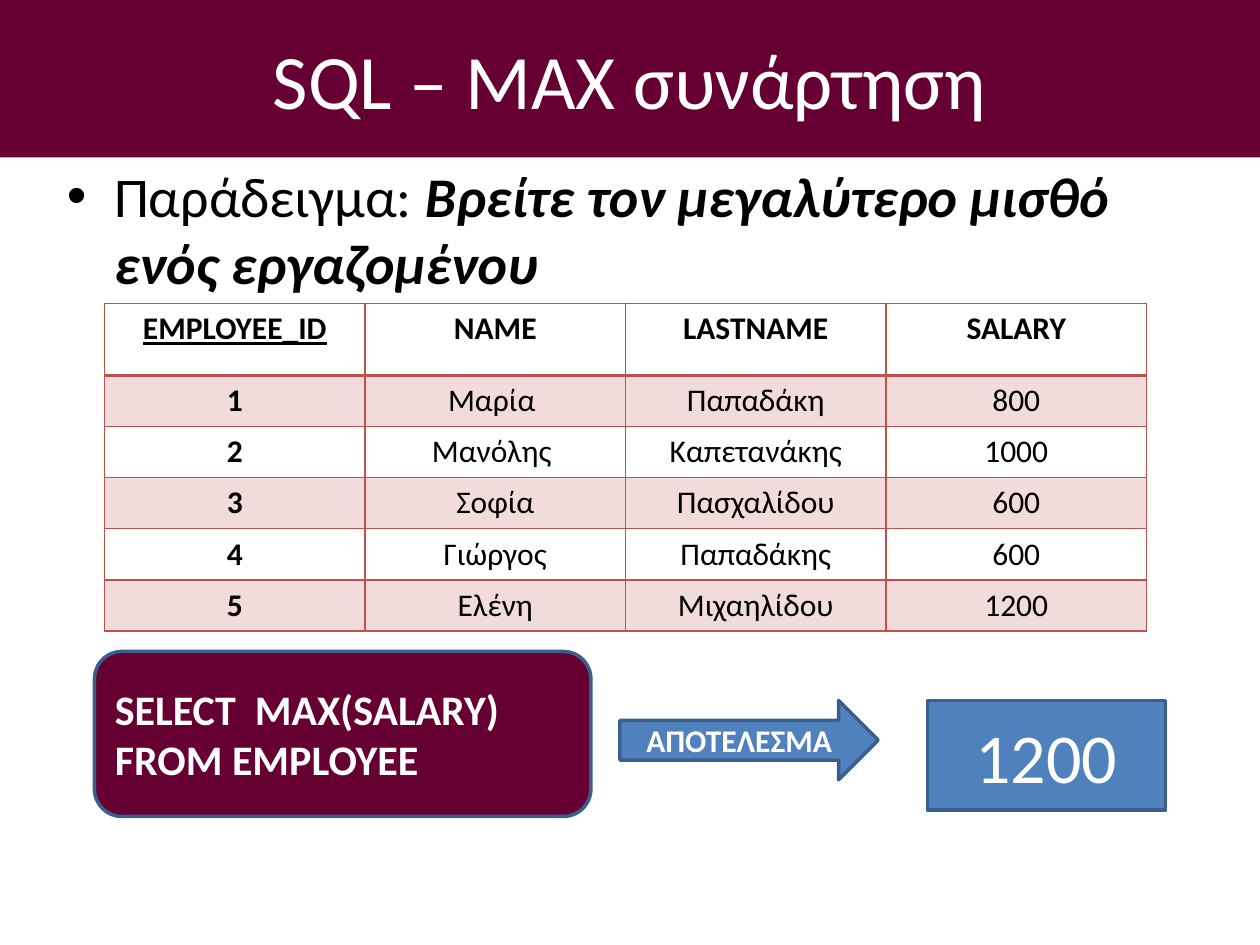
from lxml import etree
from pptx import Presentation
from pptx.dml.color import RGBColor
from pptx.enum import shapes, text
from pptx.oxml import ns
from pptx.util import Inches, Pt

COLORS = {
    "wine": "660033", "blue": "4F81BD", "outline": "3A5F8C",
    "red": "C0504D", "black": "000000", "white": "FFFFFF",
}
FONT = "Calibri"
EMPLOYEES = [
    ("EMPLOYEE_ID", "NAME", "LASTNAME", "SALARY"),
    ("1", "Μαρία ", "Παπαδάκη", "800"),
    ("2", "Μανόλης ", "Καπετανάκης", "1000"),
    ("3", "Σοφία", "Πασχαλίδου", "600"),
    ("4", "Γιώργος", "Παπαδάκης", "600"),
    ("5", "Ελένη", "Μιχαηλίδου", "1200"),
]


def rgb(name):
    return RGBColor.from_string(COLORS[name])


def add_run(paragraph, words, size, color, bold=False, italic=False, underline=False):
    run = paragraph.add_run()
    run.text = words
    font = run.font
    font.name, font.size, font.color.rgb = FONT, Pt(size), rgb(color)
    font.bold, font.italic, font.underline = bold, italic, underline


def place(part, box):
    part.left, part.top, part.width, part.height = (Inches(v) for v in box)


def add_title(slide, box):
    title = slide.shapes.title
    place(title, box)
    title.fill.solid()
    title.fill.fore_color.rgb = rgb("wine")
    title.text_frame.vertical_anchor = text.MSO_ANCHOR.MIDDLE
    heading = title.text_frame.paragraphs[0]
    heading.alignment = text.PP_ALIGN.CENTER
    add_run(heading, "SQL – ΜΑΧ συνάρτηση", 44, "white")


def add_question(slide, box):
    body = slide.placeholders[1]
    place(body, box)
    question = body.text_frame.paragraphs[0]
    add_run(question, "Παράδειγμα: ", 32, "black")
    add_run(question, "Βρείτε τον μεγαλύτερο μισθό ενός εργαζομένου", 32, "black",
            bold=True, italic=True)


def set_borders(cell, widths):
    """Draw red cell borders; widths are in points: left, right, top, bottom."""
    properties = cell._tc.get_or_add_tcPr()
    for position, (side, width) in enumerate(zip("LRTB", widths)):
        line = etree.Element(ns.qn(f"a:ln{side}"), w=str(Pt(width)))
        fill = etree.SubElement(line, ns.qn("a:solidFill"))
        etree.SubElement(fill, ns.qn("a:srgbClr"), val=COLORS["red"])
        properties.insert(position, line)


def tint(cell, percent):
    cell.fill.solid()
    cell.fill.fore_color.rgb = rgb("red")
    color = cell._tc.tcPr.find(".//" + ns.qn("a:srgbClr"))
    etree.SubElement(color, ns.qn("a:alpha"), val=str(percent * 1000))


def add_employees(slide, box):
    left, top, width, height = (Inches(v) for v in box)
    employees = slide.shapes.add_table(
        len(EMPLOYEES), len(EMPLOYEES[0]), left, top, width, height).table
    employees.horz_banding = False
    header_height = Inches(0.57)
    row_height = (height - header_height) // (len(EMPLOYEES) - 1)
    for r, record in enumerate(EMPLOYEES):
        employees.rows[r].height = row_height if r else header_height
        for c, value in enumerate(record):
            cell = employees.cell(r, c)
            if r % 2:
                tint(cell, 20)
            else:
                cell.fill.background()
            set_borders(cell, (1, 1, 2 if r == 1 else 1, 1 if r else 2))
            entry = cell.text_frame.paragraphs[0]
            entry.alignment = text.PP_ALIGN.CENTER
            add_run(entry, value, 18, "black", bold=r == 0 or c == 0,
                    underline=r == 0 and c == 0)


def add_block(slide, preset, box, fill, lines, size, bold, align):
    block = slide.shapes.add_shape(preset, *(Inches(v) for v in box))
    block.shadow.inherit = False
    block.fill.solid()
    block.fill.fore_color.rgb = rgb(fill)
    block.line.color.rgb = rgb("outline")
    block.line.width = Pt(2)
    frame = block.text_frame
    frame.vertical_anchor = text.MSO_ANCHOR.MIDDLE
    for i, words in enumerate(lines):
        paragraph = frame.add_paragraph() if i else frame.paragraphs[0]
        paragraph.alignment = align
        add_run(paragraph, words, size, "white", bold=bold)


def add_query(slide, box):
    add_block(slide, shapes.MSO_SHAPE.ROUNDED_RECTANGLE, box, "wine",
              ["SELECT  ΜΑΧ(SALARY)", "FROM EMPLOYEE"], 24, True, text.PP_ALIGN.LEFT)


def add_result(slide, box):
    """Arrow on the left of the box, with the query's answer on the right."""
    left, top, width, height = box
    answer_width = 1.89
    add_block(slide, shapes.MSO_SHAPE.RIGHT_ARROW, (left, top, 2.05, 0.63), "blue",
              ["ΑΠΟΤΕΛΕΣΜΑ"], 18, True, text.PP_ALIGN.CENTER)
    add_block(slide, shapes.MSO_SHAPE.RECTANGLE,
              (left + width - answer_width, top, answer_width, height), "blue",
              ["1200"], 40, False, text.PP_ALIGN.CENTER)


def main():
    deck = Presentation()
    deck.slide_width, deck.slide_height = Inches(10), Inches(7.5)
    slide = deck.slides.add_slide(deck.slide_layouts[1])
    add_title(slide, (0, 0, 10, 1.25))
    add_question(slide, (0.43, 1.23, 9, 4.95))
    add_query(slide, (0.75, 5.17, 3.94, 1.31))
    add_employees(slide, (0.83, 2.41, 8.27, 2.57))
    add_result(slide, (4.92, 5.56, 4.33, 0.87))
    deck.save("out.pptx")


if __name__ == "__main__":
    main()
